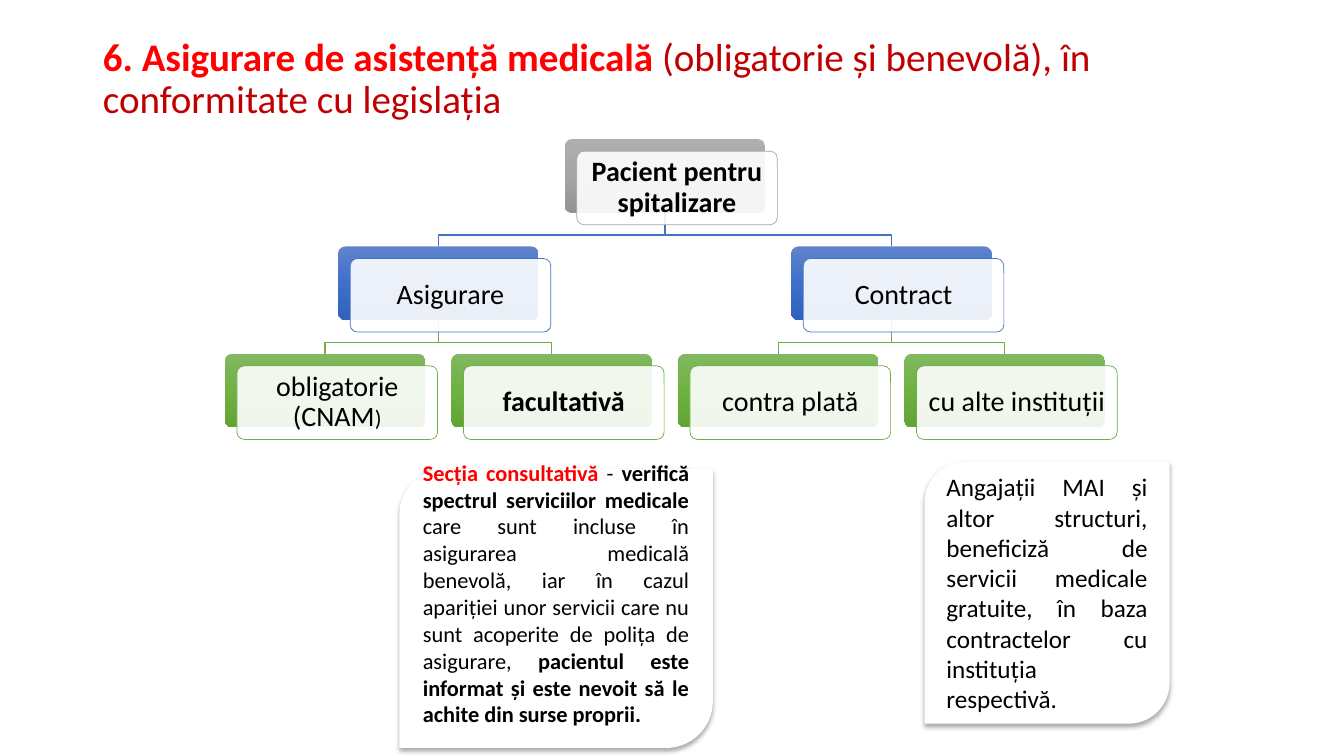
from copy import deepcopy
from dataclasses import dataclass

from pptx import Presentation
from pptx.dml.color import RGBColor
from pptx.enum.shapes import MSO_SHAPE
from pptx.enum.text import MSO_ANCHOR, MSO_AUTO_SIZE, PP_ALIGN
from pptx.oxml import parse_xml
from pptx.oxml.ns import nsdecls, qn
from pptx.shapes.autoshape import Shape
from pptx.slide import Slide
from pptx.text.text import _Paragraph
from pptx.util import Inches, Pt

ROUNDED = MSO_SHAPE.ROUNDED_RECTANGLE
DIAGONAL = MSO_SHAPE.ROUND_2_DIAG_RECTANGLE
MIDDLE, TOP = MSO_ANCHOR.MIDDLE, MSO_ANCHOR.TOP
LEFT, CENTER, JUSTIFY = PP_ALIGN.LEFT, PP_ALIGN.CENTER, PP_ALIGN.JUSTIFY
FIXED_SIZE = MSO_AUTO_SIZE.NONE

FONT = "Calibri"
WHITE = RGBColor(0xFF, 0xFF, 0xFF)
BLACK = RGBColor(0x00, 0x00, 0x00)
RED = RGBColor(0xFF, 0x00, 0x00)
DARK_RED = RGBColor(0xC0, 0x00, 0x00)
GRAY = RGBColor(0xA5, 0xA5, 0xA5)
BLUE = RGBColor(0x44, 0x72, 0xC4)
GREEN = RGBColor(0x70, 0xAD, 0x47)
GRAY_SHADES = (RGBColor(0xAF, 0xAF, 0xAF), GRAY, RGBColor(0x93, 0x93, 0x93))
BLUE_SHADES = (RGBColor(0x61, 0x83, 0xCB), RGBColor(0x3E, 0x70, 0xCA), RGBColor(0x30, 0x62, 0xBB))
GREEN_SHADES = (RGBColor(0x81, 0xB8, 0x61), RGBColor(0x6F, 0xB2, 0x42), RGBColor(0x62, 0xA3, 0x36))

# Tree grid, in inches: half-width columns and one row per level
TREE_LEFT, TREE_TOP = 2.23, 1.38
COLUMN = (8.97 - TREE_LEFT) / 6
ROW = (3.51 - TREE_TOP) / 2
NODE_WIDTH, NODE_HEIGHT = 1.99, 0.73
CARD_OFFSET = 0.12
BEND = 0.22


@dataclass(frozen=True)
class Span:
    text: str
    size: float
    color: RGBColor = BLACK
    bold: bool = False


@dataclass(frozen=True)
class Level:
    line: RGBColor
    shades: tuple[RGBColor, RGBColor, RGBColor]


@dataclass(frozen=True)
class Node:
    spans: tuple[Span, ...]
    column: int
    row: int
    children: tuple["Node", ...] = ()

    @property
    def left(self) -> float:
        return TREE_LEFT + self.column * COLUMN

    @property
    def top(self) -> float:
        return TREE_TOP + self.row * ROW

    @property
    def center(self) -> float:
        return self.left + NODE_WIDTH / 2


@dataclass(frozen=True)
class Note:
    left: float
    top: float
    width: float
    height: float
    bottom_margin: float
    spans: tuple[Span, ...]


LEVELS = (Level(GRAY, GRAY_SHADES), Level(BLUE, BLUE_SHADES), Level(GREEN, GREEN_SHADES))

TITLE = (
    Span("6. Asigurare de asistență medicală ", 27.9, RED, True),
    Span("(obligatorie și benevolă), în conformitate cu legislația", 27.9, DARK_RED),
)

INSURANCE = Node((Span("Asigurare", 20),), 1, 1, (
    Node((Span("obligatorie (CNAM", 20), Span(")", 16)), 0, 2),
    Node((Span("facultativă", 20, bold=True),), 2, 2),
))
CONTRACT = Node((Span("Contract", 20),), 5, 1, (
    Node((Span("contra plată", 20),), 4, 2),
    Node((Span("cu alte instituții", 20),), 6, 2),
))
PATIENT = Node((Span("Pacient pentru spitalizare", 20, bold=True),), 3, 0, (INSURANCE, CONTRACT))

NOTES = (
    Note(3.96, 4.65, 3.11, 2.77, 0.35, (
        Span("Secția consultativă ", 16, RED, True),
        Span("- ", 16),
        Span("verifică spectrul serviciilor medicale", 16, bold=True),
        Span(" care sunt incluse în asigurarea medicală benevolă, iar în cazul apariției unor "
             "servicii care nu sunt acoperite de polița de asigurare, ", 16),
        Span("pacientul este informat și este nevoit să le achite din surse proprii.", 16, bold=True),
    )),
    Note(9.17, 4.58, 2.43, 2.6, 0.05, (
        Span("Angajații MAI și altor structuri, beneficiză de servicii medicale gratuite, "
             "în baza contractelor cu instituția respectivă.", 18),
    )),
)


def write_spans(paragraph: _Paragraph, spans: tuple[Span, ...], alignment: PP_ALIGN) -> None:
    paragraph.alignment = alignment
    for span in spans:
        run = paragraph.add_run()
        run.text = span.text
        run.font.name = FONT
        run.font.size = Pt(span.size)
        run.font.bold = span.bold
        run.font.color.rgb = span.color


def add_box(slide: Slide, preset: MSO_SHAPE, left: float, top: float,
            width: float, height: float) -> Shape:
    box = slide.shapes.add_shape(preset, Inches(left), Inches(top), Inches(width), Inches(height))
    box.shadow.inherit = False
    box.line.fill.background()
    box.text_frame.word_wrap = True
    box.text_frame.vertical_anchor = MIDDLE
    return box


def shade(box: Shape, shades: tuple[RGBColor, RGBColor, RGBColor]) -> None:
    """Fill the box with a three-stop gradient running downwards."""
    box.fill.gradient()
    box.fill.gradient_angle = 270
    stop_list = box.element.spPr.find(".//" + qn("a:gsLst"))
    stop_list.insert(1, deepcopy(stop_list[0]))
    for stop, position, color in zip(box.fill.gradient_stops, (0, 0.5, 1), shades):
        stop.position = position
        stop.color.rgb = color


def draw_node(slide: Slide, node: Node) -> None:
    level = LEVELS[node.row]
    back = add_box(slide, ROUNDED, node.left, node.top, NODE_WIDTH, NODE_HEIGHT)
    shade(back, level.shades)
    card = add_box(slide, ROUNDED, node.left + CARD_OFFSET, node.top + CARD_OFFSET,
                   NODE_WIDTH, NODE_HEIGHT)
    card.fill.solid()
    card.fill.fore_color.rgb = WHITE
    white = card.element.spPr.find(qn("a:solidFill"))[0]
    white.append(parse_xml(f'<a:alpha {nsdecls("a")} val="90000"/>'))
    card.line.color.rgb = level.line
    card.line.width = Pt(0.5)
    for box in (back, card):
        box.adjustments[0] = 0.1
    frame = card.text_frame
    frame.margin_left = frame.margin_right = frame.margin_top = frame.margin_bottom = Inches(0.08)
    paragraph = frame.paragraphs[0]
    paragraph.line_spacing = 0.9
    write_spans(paragraph, node.spans, CENTER)
    for child in node.children:
        draw_node(slide, child)


def draw_branches(slide: Slide, parent: Node) -> None:
    bottom = parent.top + NODE_HEIGHT
    for child in parent.children:
        draw_branches(slide, child)
        start, *bends = [(Inches(x), Inches(y)) for x, y in (
            (parent.center, bottom),
            (parent.center, bottom + BEND),
            (child.center, bottom + BEND),
            (child.center, child.top),
        )]
        outline = slide.shapes.build_freeform(*start)
        outline.add_line_segments(bends, close=False)
        branch = outline.convert_to_shape()
        branch.shadow.inherit = False
        branch.fill.background()
        branch.line.color.rgb = LEVELS[child.row].line
        branch.line.width = Pt(1)


def draw_note(slide: Slide, note: Note) -> None:
    box = add_box(slide, DIAGONAL, note.left, note.top, note.width, note.height)
    box.fill.solid()
    box.fill.fore_color.rgb = WHITE
    box.element.spPr.find(qn("a:effectLst")).append(parse_xml(
        f'<a:outerShdw {nsdecls("a")} blurRad="{Pt(3.5)}" dist="{Pt(2.2)}" dir="5400000" '
        'rotWithShape="0"><a:srgbClr val="000000"><a:alpha val="32000"/></a:srgbClr></a:outerShdw>'))
    box.text_frame.margin_bottom = Inches(note.bottom_margin)
    write_spans(box.text_frame.paragraphs[0], note.spans, JUSTIFY)


def draw_title(slide: Slide) -> None:
    title = slide.shapes.title
    title.left, title.top, title.width, title.height = map(Inches, (0.92, 0.4, 11.5, 1.45))
    frame = title.text_frame
    frame.word_wrap = True
    frame.auto_size = FIXED_SIZE
    frame.vertical_anchor = TOP
    frame.margin_top = Inches(-0.03)
    frame.paragraphs[0].line_spacing = 0.9
    write_spans(frame.paragraphs[0], TITLE, LEFT)


def main() -> None:
    presentation = Presentation()
    presentation.slide_width, presentation.slide_height = Inches(13.33), Inches(7.5)
    slide = presentation.slides.add_slide(presentation.slide_layouts[5])
    draw_title(slide)
    draw_branches(slide, PATIENT)
    draw_node(slide, PATIENT)
    for note in NOTES:
        draw_note(slide, note)
    presentation.save("out.pptx")


if __name__ == "__main__":
    main()
